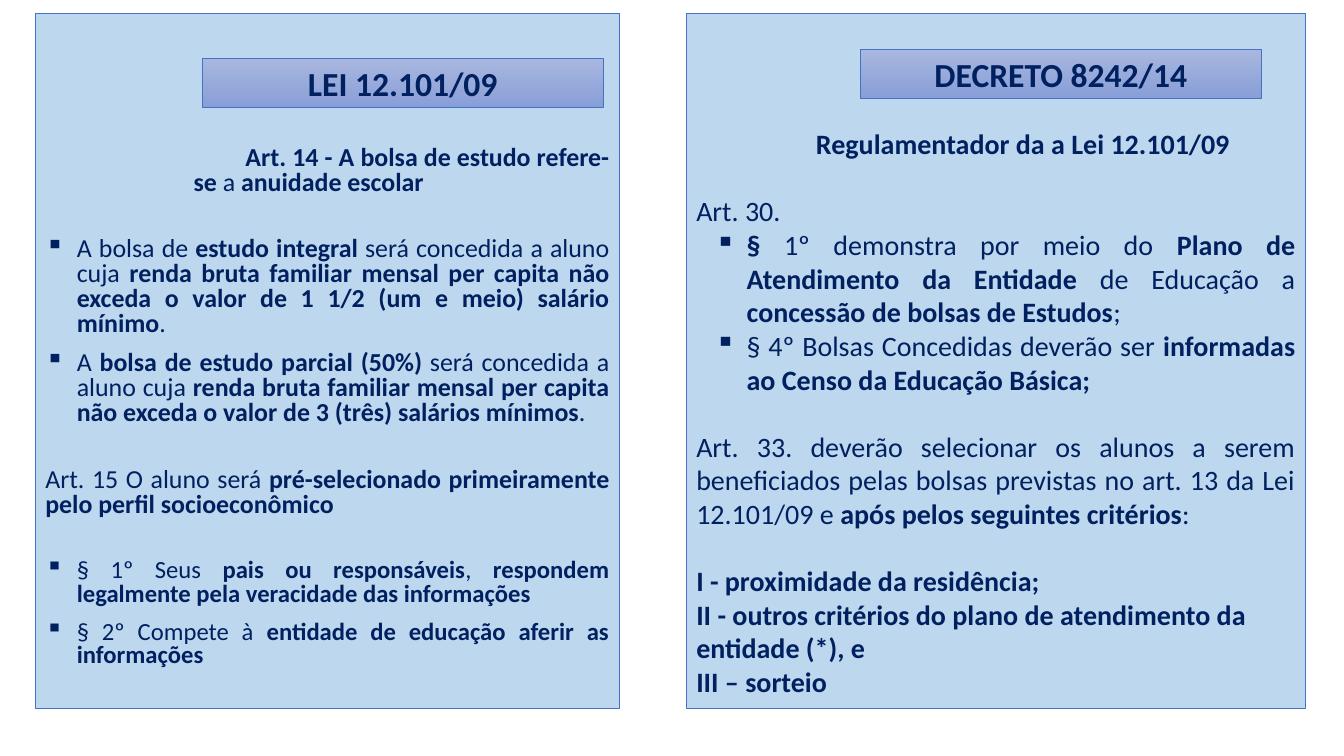
from dataclasses import dataclass

from lxml.etree import SubElement
from pptx import Presentation
from pptx.dml.color import RGBColor as Rgb
from pptx.enum.shapes import MSO_SHAPE as Shape
from pptx.enum.text import MSO_ANCHOR as Anchor, PP_ALIGN as Align
from pptx.oxml.ns import qn
from pptx.util import Pt


@dataclass(frozen=True)
class Theme:
    font: str = "Calibri"
    ink: Rgb = Rgb(0x00, 0x20, 0x60)
    panel: Rgb = Rgb(0xBD, 0xD7, 0xEE)
    edge: Rgb = Rgb(0x44, 0x72, 0xC4)
    light: Rgb = Rgb(0xA8, 0xB7, 0xDF)
    dark: Rgb = Rgb(0x88, 0x9E, 0xD7)
    head: float = 24
    law: float = 18.5
    note: float = 17.6
    decree: float = 20


THEME = Theme()


@dataclass(frozen=True)
class Para:
    """Text with **bold** spans; left and first are indents in points."""
    text: str
    size: float
    gap: float = 0
    left: float = 0
    first: float = 0
    bullet: bool = False
    align: Align = Align.JUSTIFY
    pitch: float = 1.0


def draw_box(slide, box):
    shape = slide.shapes.add_shape(Shape.RECTANGLE, *map(Pt, box))
    shape.shadow.inherit = False
    shape.line.color.rgb = THEME.edge
    shape.line.width = Pt(0.5)
    shape.text_frame.word_wrap = True
    return shape


def write(para, item):
    para.alignment = item.align
    para.line_spacing = item.pitch
    para.space_before = Pt(item.gap)
    props = para._p.get_or_add_pPr()
    props.set("marL", str(Pt(item.left)))
    props.set("indent", str(Pt(item.first)))
    if item.bullet:
        SubElement(props, qn("a:buChar")).set("char", "▪")
    para.font.name = THEME.font
    para.font.size = Pt(item.size)
    para.font.color.rgb = THEME.ink
    for i, part in enumerate(item.text.split("**")):
        if part:
            run = para.add_run()
            run.text = part
            run.font.bold = i % 2 == 1


def draw_panel(slide, box, inset, items):
    shape = draw_box(slide, box)
    shape.fill.solid()
    shape.fill.fore_color.rgb = THEME.panel
    frame = shape.text_frame
    frame.vertical_anchor = Anchor.TOP
    frame.margin_top = Pt(inset)
    for i, item in enumerate(items):
        write(frame.add_paragraph() if i else frame.paragraphs[0], item)


def draw_head(slide, box, text):
    shape = draw_box(slide, box)
    shape.fill.gradient()
    shape.fill.gradient_angle = 270
    for stop, color in zip(shape.fill.gradient_stops, (THEME.light, THEME.dark)):
        stop.color.rgb = color
    shape.text_frame.vertical_anchor = Anchor.MIDDLE
    write(shape.text_frame.paragraphs[0],
          Para(f"**{text}**", THEME.head, align=Align.CENTER))


def draw_law(slide, box):
    x, y, _, _ = box
    size, note = THEME.law, THEME.note
    tight = dict(pitch=0.8)
    point = dict(left=22.5, first=-22.5, bullet=True, **tight)
    draw_panel(slide, box, 95, [
        Para("**Art. 14 - A bolsa de estudo refere-se** a **anuidade escolar**",
             size, left=106, first=37, **tight),
        Para("A bolsa de **estudo integral** será concedida a aluno cuja "
             "**renda bruta familiar mensal per capita não exceda o valor "
             "de 1 1/2 (um e meio) salário mínimo**.", size, 30, **point),
        Para("A **bolsa de estudo parcial (50%)** será concedida a aluno cuja "
             "**renda bruta familiar mensal per capita não exceda o valor "
             "de 3 (três) salários mínimos**.", size, 10, **point),
        Para("Art. 15 O aluno será **pré-selecionado primeiramente pelo "
             "perfil socioeconômico**", size, 30, **tight),
        Para("§ 1º Seus **pais ou responsáveis**, **respondem legalmente "
             "pela veracidade das informações**", note, 30, **point),
        Para("§ 2º Compete à **entidade de educação aferir as informações**",
             note, 10, **point),
    ])
    draw_head(slide, (x + 119.5, y + 32.5, 286, 35), "LEI 12.101/09")


def draw_decree(slide, box):
    x, y, _, _ = box
    size = THEME.decree
    blank = 24
    point = dict(left=36, first=-22.5, bullet=True)
    plain = dict(align=Align.LEFT)
    draw_panel(slide, box, 81, [
        Para("**Regulamentador da a Lei 12.101/09**", size, left=85.5, **plain),
        Para("Art. 30.", size, blank, **plain),
        Para("**§** 1º demonstra por meio do **Plano de Atendimento da "
             "Entidade** de Educação a **concessão de bolsas de Estudos**;",
             size, **point),
        Para("§ 4º Bolsas Concedidas deverão ser **informadas ao Censo da "
             "Educação Básica;**", size, **point),
        Para("Art. 33. deverão selecionar os alunos a serem beneficiados "
             "pelas bolsas previstas no art. 13 da Lei 12.101/09 e "
             "**após pelos seguintes critérios**:", size, blank),
        Para("**I - proximidade da residência;**", size, blank, **plain),
        Para("**II - outros critérios do plano de atendimento da entidade "
             "(*), e**", size, **plain),
        Para("**III – sorteio**", size, **plain),
    ])
    draw_head(slide, (x + 124.5, y + 26, 286, 35), "DECRETO 8242/14")


def main():
    deck = Presentation()
    deck.slide_width, deck.slide_height = Pt(960), Pt(540)
    slide = deck.slides.add_slide(deck.slide_layouts[6])
    draw_law(slide, (25.25, 9.5, 417, 496.5))
    draw_decree(slide, (490.25, 9.5, 442, 496.5))
    deck.save("out.pptx")


if __name__ == "__main__":
    main()
